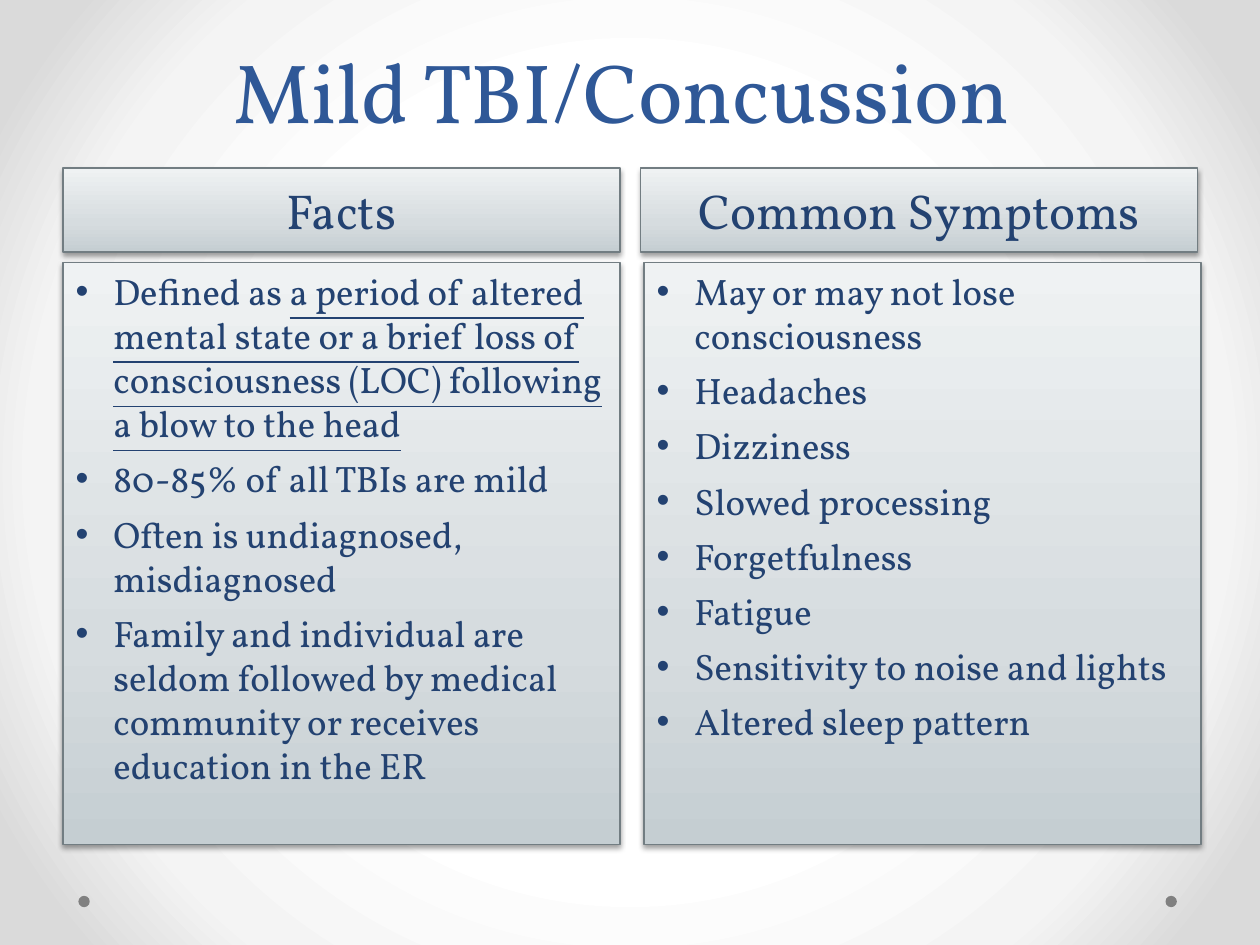
from dataclasses import dataclass

import lxml.etree
import pptx
import pptx.dml.color
import pptx.enum.shapes
import pptx.enum.text
import pptx.oxml
import pptx.oxml.ns
import pptx.util

Pt = pptx.util.Pt
Align = pptx.enum.text.PP_ALIGN
Anchor = pptx.enum.text.MSO_ANCHOR
NS = pptx.oxml.ns.nsdecls("a")
FACE = "Vollkorn"
NAVY = "234271"
PANEL = [(0, "C5CED2"), (35, "D6DCDF"), (100, "EFF2F3")]
GLOW = [(50, "FFFFFF"), (76, "F4F4F4"), (92, "DADADA")]
LINEAR = '<a:lin ang="16200000" scaled="0"/>'
ROUND = ('<a:path path="circle"><a:fillToRect l="50000" t="50000" '
         'r="50000" b="50000"/></a:path>')
SHADOW = (f'<a:effectLst {NS}><a:outerShdw blurRad="{Pt(3.1)}" dist="{Pt(1.6)}" '
          'dir="5400000" rotWithShape="0"><a:srgbClr val="000000">'
          '<a:alpha val="38000"/></a:srgbClr></a:outerShdw></a:effectLst>')

WIDE = 318.24
INDENT = 21.6


@dataclass
class Column:
    head: str
    items: list[list[str]]  # runs of each item; the second run is underlined
    left: float
    inner: float  # left edge of the list panel
    slots: tuple[int, int]


COLUMNS = [
    Column("Facts", [
        ["Defined as ", "a period of altered mental state or a brief loss of "
         "consciousness (LOC) following a blow to the head"],
        ["80-85% of all TBIs are mild"],
        ["Often is undiagnosed, misdiagnosed"],
        ["Family and individual are seldom followed by medical community "
         "or receives education in the ER"],
    ], 36, 36, (1, 2)),
    Column("Common Symptoms", [
        ["May or may not lose consciousness"],
        ["Headaches"],
        ["Dizziness"],
        ["Slowed processing"],
        ["Forgetfulness"],
        ["Fatigue"],
        ["Sensitivity to noise and lights"],
        ["Altered sleep pattern"],
    ], 366, 368, (3, 4)),
]


def color(code: str) -> pptx.dml.color.RGBColor:
    return pptx.dml.color.RGBColor.from_string(code)


def blend(stops: list[tuple[int, str]], shade: str) -> lxml.etree._Element:
    """Return a gradient fill element."""
    marks = "".join(f'<a:gs pos="{pos * 1000}"><a:srgbClr val="{code}"/></a:gs>'
                    for pos, code in stops)
    return pptx.oxml.parse_xml(
        f'<a:gradFill {NS} rotWithShape="1"><a:gsLst>{marks}</a:gsLst>{shade}</a:gradFill>')


def place(shape, left: float, top: float, width: float, height: float) -> None:
    shape.left, shape.top = Pt(left), Pt(top)
    shape.width, shape.height = Pt(width), Pt(height)


def style(para, size: float, code: str) -> None:
    """Format the paragraph, and its runs, which have layout defaults to override."""
    for font in (para.font, *(run.font for run in para.runs)):
        font.name, font.size, font.bold = FACE, Pt(size), False
        font.color.rgb = color(code)


def frame(shape, anchor):
    text = shape.text_frame
    text.word_wrap = True
    text.auto_size = pptx.enum.text.MSO_AUTO_SIZE.NONE
    text.vertical_anchor = anchor
    return text


def panel(shape, left: float, top: float, height: float) -> None:
    """Place a placeholder as a shaded, outlined panel."""
    place(shape, left, top, WIDE, height)
    props = shape._element.spPr
    props.append(blend(PANEL, LINEAR))
    shape.line.color.rgb = color("727D82")
    shape.line.width = Pt(0.75)
    props.append(pptx.oxml.parse_xml(SHADOW))


def center(shape, words: str, size: float, code: str, anchor):
    text = frame(shape, anchor)
    text.text = words
    para = text.paragraphs[0]
    para.alignment = Align.CENTER
    para.space_before = Pt(0)
    style(para, size, code)
    return para


def bullets(shape, items: list[list[str]]) -> None:
    text = frame(shape, Anchor.TOP)
    for index, item in enumerate(items):
        para = text.add_paragraph() if index else text.paragraphs[0]
        for spot, words in enumerate(item):
            run = para.add_run()
            run.text = words
            if spot:
                run.font.underline = True
        para.space_before = Pt(6.3)
        props = para._p.get_or_add_pPr()
        props.set("marL", str(Pt(INDENT)))
        props.set("indent", str(-Pt(INDENT)))
        for mark in (f'<a:buClr {NS}><a:srgbClr val="{NAVY}"/></a:buClr>',
                     f'<a:buFont {NS} typeface="Arial"/>',
                     f'<a:buChar {NS} char="•"/>'):
            props.append(pptx.oxml.parse_xml(mark))
        style(para, 21, NAVY)


def dot(slide, left: float) -> None:
    shape = slide.shapes.add_shape(pptx.enum.shapes.MSO_SHAPE.OVAL,
                                   Pt(left), Pt(511.9), Pt(6.5), Pt(6.5))
    shape.shadow.inherit = False
    shape.fill.solid()
    shape.fill.fore_color.rgb = color("808080")
    shape.line.fill.background()


def main() -> None:
    deck = pptx.Presentation()
    deck.slide_width, deck.slide_height = Pt(720), Pt(540)
    slide = deck.slides.add_slide(deck.slide_layouts.get_by_name("Comparison"))

    slide.background.fill.solid()
    back = slide._element.cSld.bg.bgPr
    back.replace(back[0], blend(GLOW, ROUND))

    title = slide.shapes.title
    place(title, 36, 12, 648, 72)
    para = center(title, "Mild TBI/Concussion ", 48, "2F5897", Anchor.BOTTOM)
    para.line_spacing = Pt(58)

    for col in COLUMNS:
        head, body = (slide.placeholders[slot] for slot in col.slots)
        panel(head, col.left, 96, 48)
        center(head, col.head, 28, NAVY, Anchor.MIDDLE)
        panel(body, col.inner, 150, 332.5)
        bullets(body, col.items)

    for left in (44.8, 666):
        dot(slide, left)
    deck.save("out.pptx")


if __name__ == "__main__":
    main()
